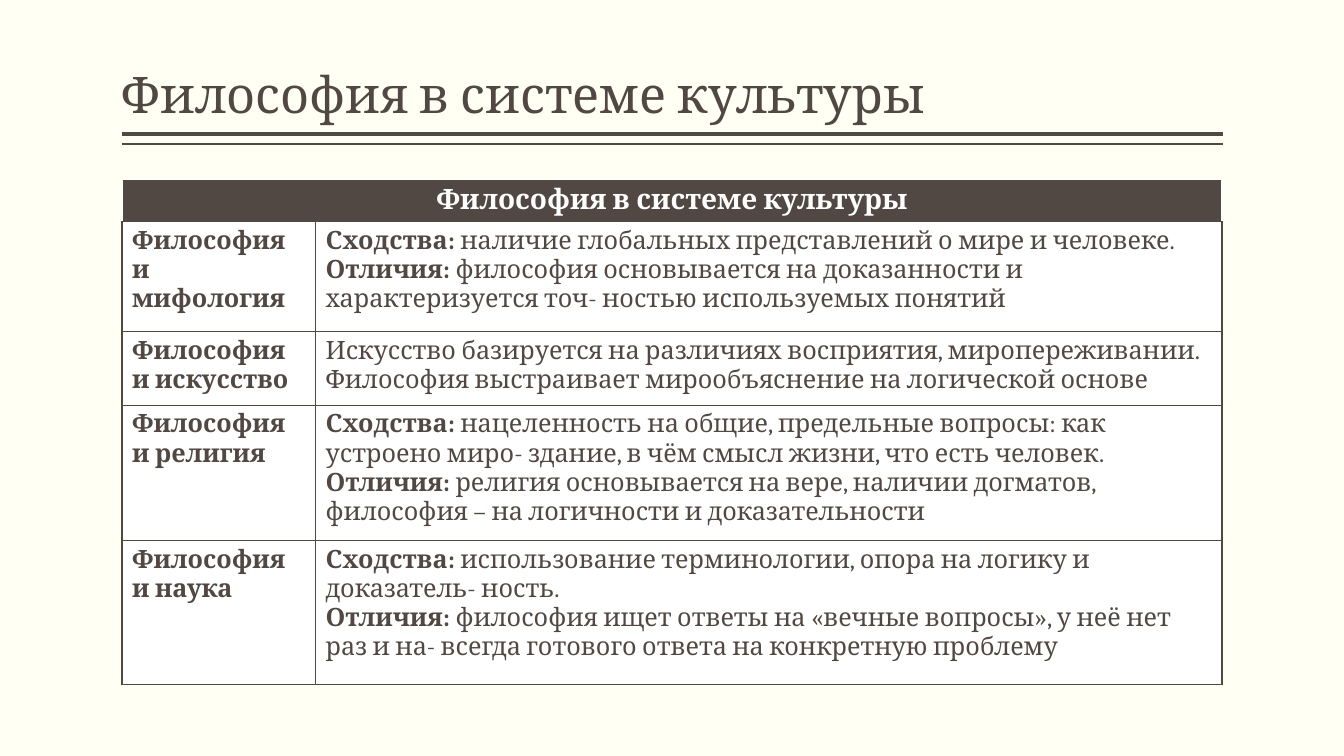
import dataclasses

import pptx
import pptx.dml.color
import pptx.enum.shapes
import pptx.enum.text
import pptx.oxml
import pptx.oxml.ns
import pptx.util

Inches = pptx.util.Inches
Pt = pptx.util.Pt
qn = pptx.oxml.ns.qn

COLORS = {"page": "FFFFF3", "brown": "514843", "white": "FFFFFF", "shadow": "000000"}
FONT = "Cambria"
HEADING = "Философия в системе культуры"
LEFT, RIGHT = 1.21, 12.13
ALIGN = pptx.enum.text.PP_ALIGN


@dataclasses.dataclass(frozen=True)
class Rule:
    y: float
    weight: float


@dataclasses.dataclass(frozen=True)
class Statement:
    text: str
    label: str = ""


@dataclasses.dataclass(frozen=True)
class Comparison:
    subject: str
    height: float
    statements: tuple[Statement, ...]


TITLE_RULES = [Rule(1.33, 3), Rule(1.43, 1)]
COLUMN_WIDTHS = [1.92, 8.99]
HEADER_HEIGHT = 0.37
SIMILAR, DIFFERENT = "Сходства: ", "Отличия: "
COMPARISONS = [
    Comparison("Философия и мифология", 1.09, (
        Statement("наличие глобальных представлений о мире и человеке.", SIMILAR),
        Statement("философия основывается на доказанности и характеризуется "
                  "точ- ностью используемых понятий", DIFFERENT),
    )),
    Comparison("Философия и искусство", 0.73, (
        Statement("Искусство базируется на различиях восприятия, миропереживании."),
        Statement("Философия выстраивает мирообъяснение на логической основе"),
    )),
    Comparison("Философия и религия", 1.34, (
        Statement("нацеленность на общие, предельные вопросы: как устроено "
                  "миро- здание, в чём смысл жизни, что есть человек.", SIMILAR),
        Statement("религия основывается на вере, наличии догматов, "
                  "философия – на логичности и доказательности", DIFFERENT),
    )),
    Comparison("Философия и наука", 1.43, (
        Statement("использование терминологии, опора на логику и "
                  "доказатель- ность.", SIMILAR),
        Statement("философия ищет ответы на «вечные вопросы», у неё нет раз и "
                  "на- всегда готового ответа на конкретную проблему", DIFFERENT),
    )),
]


def rgb(name: str) -> pptx.dml.color.RGBColor:
    return pptx.dml.color.RGBColor.from_string(COLORS[name])


def add_run(paragraph, text: str, size: float, color: str = "brown", bold: bool = False):
    run = paragraph.add_run()
    run.text = text
    for attribute, value in {"name": FONT, "size": Pt(size), "bold": bold}.items():
        setattr(run.font, attribute, value)
    run.font.color.rgb = rgb(color)
    return run


def add_text_shadow(run) -> None:
    effects = pptx.oxml.parse_xml(
        f'<a:effectLst {pptx.oxml.ns.nsdecls("a")}>'
        '<a:outerShdw blurRad="38100" dist="38100" dir="2700000" algn="tl">'
        f'<a:srgbClr val="{COLORS["shadow"]}"><a:alpha val="43000"/></a:srgbClr>'
        '</a:outerShdw></a:effectLst>')
    run.font._element.find(qn("a:solidFill")).addnext(effects)


def add_title(slide) -> None:
    title = slide.shapes.title
    box = {"left": LEFT, "top": 0.08, "width": RIGHT - LEFT, "height": 1.2}
    for attribute, value in box.items():
        setattr(title, attribute, Inches(value))
    frame_format = {
        "margin_left": 0, "margin_right": 0,
        "margin_top": Inches(0.05), "margin_bottom": Inches(0.05),
        "vertical_anchor": pptx.enum.text.MSO_ANCHOR.BOTTOM,
        "auto_size": pptx.enum.text.MSO_AUTO_SIZE.NONE, "word_wrap": True,
    }
    for attribute, value in frame_format.items():
        setattr(title.text_frame, attribute, value)
    paragraph = title.text_frame.paragraphs[0]
    paragraph.alignment = ALIGN.LEFT
    paragraph.line_spacing = 0.9
    add_text_shadow(add_run(paragraph, HEADING, 36))


def add_rule(slide, rule: Rule) -> None:
    line = slide.shapes.add_connector(
        pptx.enum.shapes.MSO_CONNECTOR.STRAIGHT,
        Inches(LEFT), Inches(rule.y), Inches(RIGHT), Inches(rule.y))
    line.line.color.rgb = rgb("brown")
    line.line.width = Pt(rule.weight)
    line._element.spPr.append(
        pptx.oxml.parse_xml(f'<a:effectLst {pptx.oxml.ns.nsdecls("a")}/>'))


def format_cell(cell, fill: str, edges: dict[str, str]) -> None:
    """Fill the cell and draw 1 pt edges; keys are L, R, T, B in schema order."""
    cell.fill.solid()
    cell.fill.fore_color.rgb = rgb(fill)
    properties = cell._tc.get_or_add_tcPr()
    for position, (side, color) in enumerate(edges.items()):
        properties.insert(position, pptx.oxml.parse_xml(
            f'<a:ln{side} {pptx.oxml.ns.nsdecls("a")} w="{Pt(1)}"><a:solidFill>'
            f'<a:srgbClr val="{COLORS[color]}"/></a:solidFill></a:ln{side}>'))


def add_statements(cell, statements: tuple[Statement, ...]) -> None:
    frame = cell.text_frame
    for index, statement in enumerate(statements):
        paragraph = frame.add_paragraph() if index else frame.paragraphs[0]
        if statement.label:
            add_run(paragraph, statement.label, 18, bold=True)
        add_run(paragraph, statement.text, 18)


def add_comparison_table(slide) -> None:
    heights = [HEADER_HEIGHT] + [comparison.height for comparison in COMPARISONS]
    table = slide.shapes.add_table(
        len(heights), len(COLUMN_WIDTHS), Inches(LEFT), Inches(1.78),
        Inches(sum(COLUMN_WIDTHS)), Inches(sum(heights))).table
    table.horz_banding = False
    for column, width in zip(table.columns, COLUMN_WIDTHS):
        column.width = Inches(width)
    for row, height in zip(table.rows, heights):
        row.height = Inches(height)

    header = table.cell(0, 0)
    header.merge(table.cell(0, 1))
    header_edges = {"L": "white", "R": "white", "T": "white", "B": "brown"}
    for cell in table.rows[0].cells:
        format_cell(cell, "brown", header_edges)
    heading = header.text_frame.paragraphs[0]
    heading.alignment = ALIGN.CENTER
    add_run(heading, HEADING, 20, "white", bold=True)

    for row_index, comparison in enumerate(COMPARISONS, start=1):
        subject, details = table.rows[row_index].cells
        for cell in (subject, details):
            format_cell(cell, "white", dict.fromkeys("LRTB", "brown"))
        add_run(subject.text_frame.paragraphs[0], comparison.subject, 18, bold=True)
        add_statements(details, comparison.statements)


def main() -> None:
    presentation = pptx.Presentation()
    presentation.slide_width = Inches(13.33)
    presentation.slide_height = Inches(7.5)
    slide = presentation.slides.add_slide(presentation.slide_layouts[5])
    slide.background.fill.solid()
    slide.background.fill.fore_color.rgb = rgb("page")
    for rule in TITLE_RULES:
        add_rule(slide, rule)
    add_title(slide)
    add_comparison_table(slide)
    presentation.save("out.pptx")


if __name__ == "__main__":
    main()
